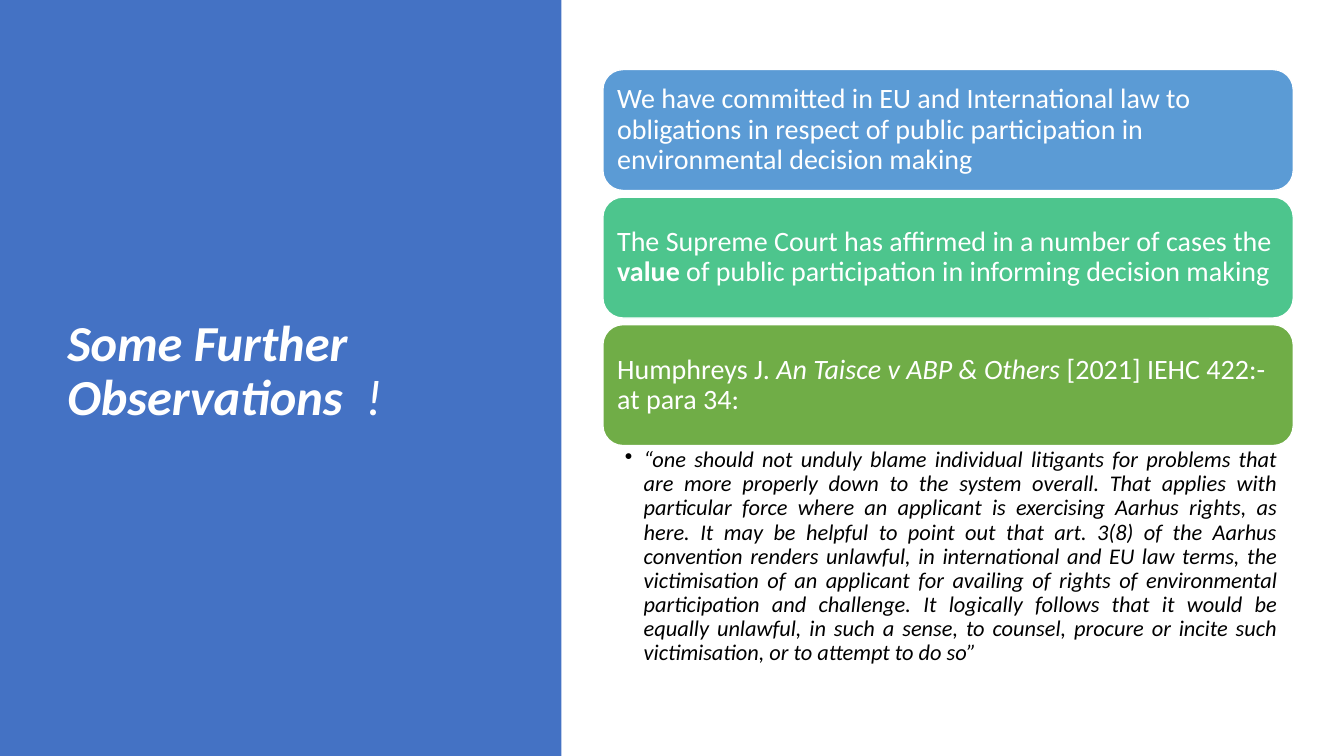
"""Build the "Some Further Observations" slide with three cards and a quotation."""
from dataclasses import dataclass

from lxml import etree
from pptx import Presentation
from pptx.dml.color import RGBColor
from pptx.enum.shapes import MSO_SHAPE
from pptx.enum.text import MSO_ANCHOR, PP_ALIGN
from pptx.oxml.ns import qn
from pptx.shapes.autoshape import Shape
from pptx.slide import Slide
from pptx.util import Pt

RECTANGLE = MSO_SHAPE.RECTANGLE
ROUNDED = MSO_SHAPE.ROUNDED_RECTANGLE
TOP = MSO_ANCHOR.TOP
MIDDLE = MSO_ANCHOR.MIDDLE
LEFT = PP_ALIGN.LEFT
JUSTIFY = PP_ALIGN.JUSTIFY


@dataclass(frozen=True)
class Theme:
    """Colours, font and type sizes of the slide."""
    font: str = "Calibri"
    panel: str = "4472C4"
    blue: str = "5B9BD5"
    teal: str = "4DC58D"
    green: str = "70AD47"
    white: str = "FFFFFF"
    black: str = "000000"
    title_size: float = 36
    card_size: float = 20
    quote_size: float = 16
    line_spacing: float = 0.9


@dataclass(frozen=True)
class Box:
    """A rectangle in points."""
    left: float
    top: float
    width: float
    height: float


@dataclass(frozen=True)
class Run:
    """A piece of text with its emphasis."""
    text: str
    bold: bool = False
    italic: bool = False


@dataclass(frozen=True)
class Card:
    """A coloured card and its text."""
    fill: str
    runs: tuple[Run, ...]


THEME = Theme()
SLIDE_W, SLIDE_H = 960, 540
PANEL = Box(0, 0, 401, SLIDE_H)
TITLE = Box(41, 49, 299.5, 433.4)
FIRST_CARD = Box(430.6, 49.7, 493.2, 86.4)
CARD_PITCH = 91.1
QUOTE = Box(430.6, 318.2, 493.2, 162.7)
QUOTE_INDENT = 13.5

TITLE_RUNS = (
    Run("Some Further Observations ", bold=True, italic=True),
    Run(" !", italic=True),
)
CARDS = (
    Card(THEME.blue, (
        Run("We have committed in EU and International law to obligations in "
            "respect of public participation in environmental decision making"),
    )),
    Card(THEME.teal, (
        Run("The Supreme Court has affirmed in a number of cases the "),
        Run("value", bold=True),
        Run(" of public participation in informing decision making"),
    )),
    Card(THEME.green, (
        Run("Humphreys J. "),
        Run("An Taisce v ABP & Others ", italic=True),
        Run("[2021] IEHC 422:- at para 34:"),
    )),
)
QUOTE_RUNS = (
    Run("“one should not unduly blame individual litigants for problems that are "
        "more properly down to the system overall. That applies with particular "
        "force where an applicant is exercising Aarhus rights, as here. It may be "
        "helpful to point out that art. 3(8) of the Aarhus convention renders "
        "unlawful, in international and EU law terms, the victimisation of an "
        "applicant for availing of rights of environmental participation and "
        "challenge. It logically follows that it would be equally unlawful, in "
        "such a sense, to counsel, procure or incite such victimisation, or to "
        "attempt to do so”", italic=True),
)


def place(box: Box) -> tuple[Pt, Pt, Pt, Pt]:
    """Return the box as lengths for a new shape."""
    return Pt(box.left), Pt(box.top), Pt(box.width), Pt(box.height)


def add_block(s: Slide, kind: MSO_SHAPE, box: Box, fill: str) -> Shape:
    """Add a filled shape without line or shadow."""
    sp = s.shapes.add_shape(kind, *place(box))
    sp.shadow.inherit = False
    sp.fill.solid()
    sp.fill.fore_color.rgb = RGBColor.from_string(fill)
    sp.line.fill.background()
    return sp


def write(sp: Shape, runs: tuple[Run, ...], size: float, color: str,
          insets: tuple[float, float, float, float],
          anchor: MSO_ANCHOR = MIDDLE, align: PP_ALIGN = LEFT) -> None:
    """Write one paragraph; insets run left, top, right, bottom."""
    tf = sp.text_frame
    tf.word_wrap = True
    tf.vertical_anchor = anchor
    tf.margin_left, tf.margin_top, tf.margin_right, tf.margin_bottom = map(Pt, insets)
    p = tf.paragraphs[0]
    p.alignment = align
    p.line_spacing = THEME.line_spacing
    for run in runs:
        r = p.add_run()
        r.text = run.text
        r.font.name = THEME.font
        r.font.size = Pt(size)
        r.font.bold = run.bold
        r.font.italic = run.italic
        r.font.color.rgb = RGBColor.from_string(color)


def add_bullet(sp: Shape, indent: float) -> None:
    """Give the first paragraph a hanging bullet."""
    p = sp.text_frame.paragraphs[0]
    p.level = 1
    props = p._p.get_or_add_pPr()
    props.set("marL", str(Pt(indent)))
    props.set("indent", str(-Pt(indent)))
    etree.SubElement(props, qn("a:buChar")).set("char", "•")


def main() -> None:
    """Build and save the slide."""
    prs = Presentation()
    prs.slide_width, prs.slide_height = Pt(SLIDE_W), Pt(SLIDE_H)
    s = prs.slides.add_slide(prs.slide_layouts[6])

    add_block(s, RECTANGLE, PANEL, THEME.panel)
    title = s.shapes.add_textbox(*place(TITLE))
    write(title, TITLE_RUNS, THEME.title_size, THEME.white, (7.2, 3.6, 7.2, 3.6))

    for i, card in enumerate(CARDS):
        box = Box(FIRST_CARD.left, FIRST_CARD.top + i * CARD_PITCH,
                  FIRST_CARD.width, FIRST_CARD.height)
        sp = add_block(s, ROUNDED, box, card.fill)
        sp.line.color.rgb = RGBColor.from_string(THEME.white)
        sp.line.width = Pt(1)
        write(sp, card.runs, THEME.card_size, THEME.white, (6, 6, 6, 6))

    quote = s.shapes.add_textbox(*place(QUOTE))
    write(quote, QUOTE_RUNS, THEME.quote_size, THEME.black,
          (15.7, 2, 11.4, 2), TOP, JUSTIFY)
    add_bullet(quote, QUOTE_INDENT)

    prs.save("out.pptx")


if __name__ == "__main__":
    main()
